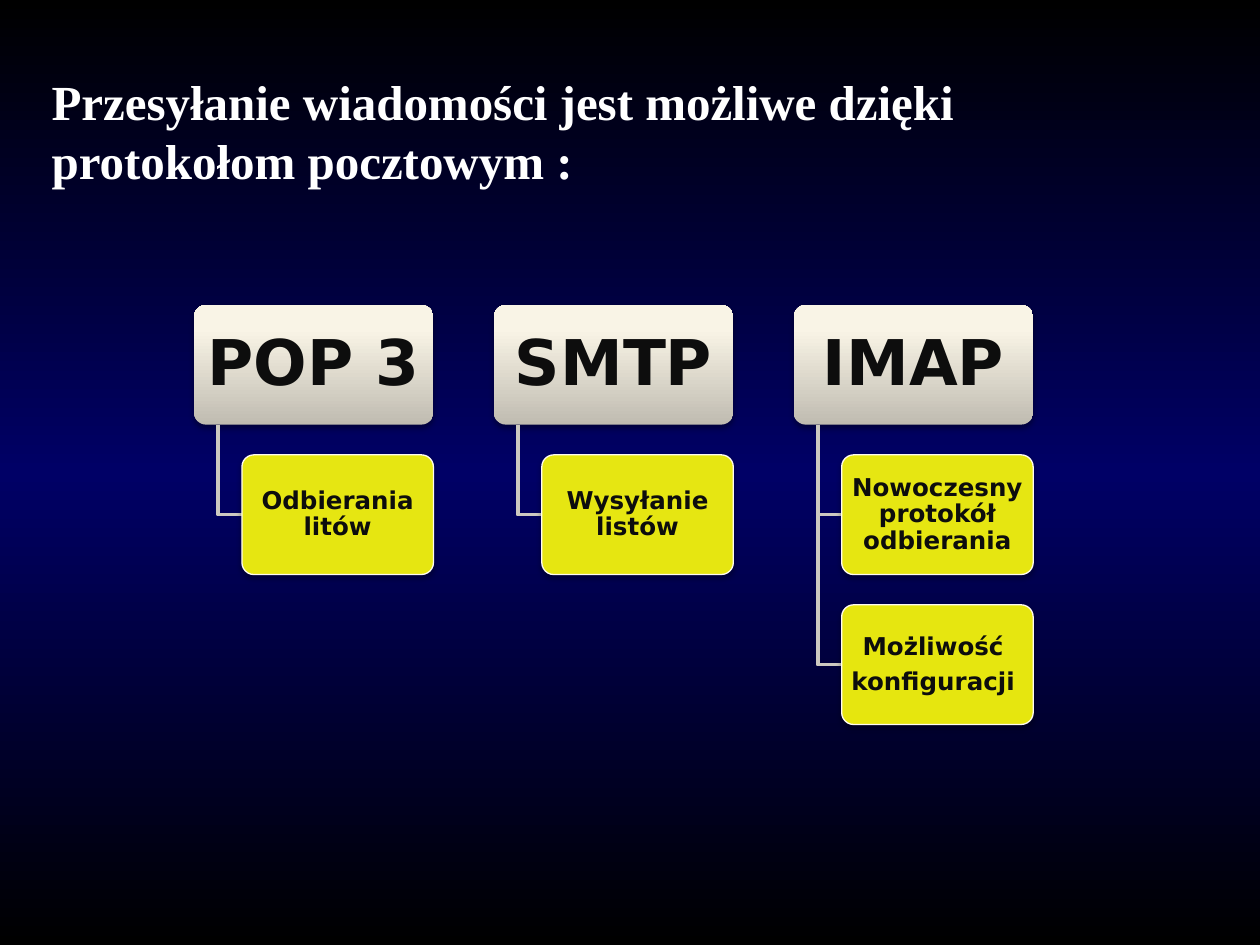
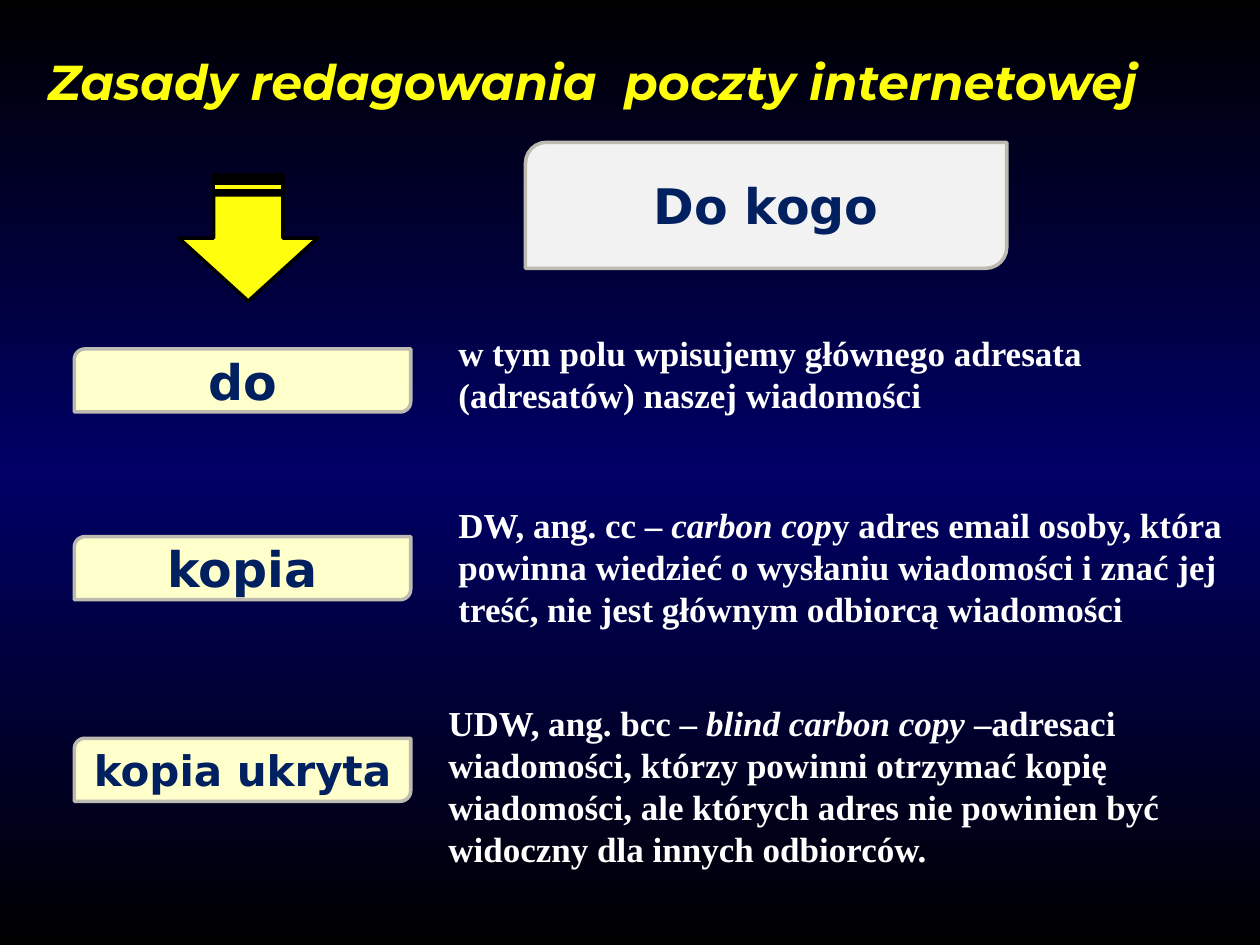
from dataclasses import dataclass
from typing import Any, NamedTuple

from lxml import etree
from pptx import Presentation
from pptx.dml.color import RGBColor
from pptx.enum.shapes import MSO_SHAPE
from pptx.enum.text import MSO_ANCHOR, MSO_AUTO_SIZE, PP_ALIGN
from pptx.oxml.ns import qn
from pptx.util import Inches, Pt

ROUNDED = MSO_SHAPE.ROUNDED_RECTANGLE
DIAGONAL = MSO_SHAPE.ROUND_2_DIAG_RECTANGLE
STRIPED_ARROW = MSO_SHAPE.STRIPED_RIGHT_ARROW
TOP, MIDDLE = MSO_ANCHOR.TOP, MSO_ANCHOR.MIDDLE
LEFT, CENTER = PP_ALIGN.LEFT, PP_ALIGN.CENTER
NO_FIT, GROW = MSO_AUTO_SIZE.NONE, MSO_AUTO_SIZE.SHAPE_TO_FIT_TEXT
TITLE_ONLY = 5


class TextStyle(NamedTuple):
    font: str
    size: int
    color: str
    italic: bool = False


class Outline(NamedTuple):
    color: str
    width: float


@dataclass(frozen=True)
class Theme:
    serif: str = "Times New Roman"
    sans: str = "DejaVu Sans"
    display: str = "Montserrat"
    white: str = "FFFFFF"
    black: str = "000000"
    ink: str = "0D0D0D"
    navy: str = "002060"
    yellow: str = "FFFF0D"
    cream: str = "FFFFCC"
    pale: str = "F2F2F2"
    backdrop: tuple = ((0, "000000"), (50, "000066"), (100, "000000"))
    ivory: tuple = ((0, "C0BCB1"), (80, "F9F4E6"), (100, "FBF6E7"))
    branch: Outline = Outline("CCC9C0", 2)
    task_edge: Outline = Outline("FFFBF0", 0.75)
    label_edge: Outline = Outline("BDBAB2", 2)
    arrow_edge: Outline = Outline("000000", 2)
    title_size: int = 28
    protocol_size: int = 36
    task_size: int = 14
    label_size: int = 28
    long_label_size: int = 24
    body_size: int = 20


THEME = Theme()
PLAIN_TITLE = TextStyle(THEME.serif, THEME.title_size, THEME.white)
ACCENT_TITLE = TextStyle(THEME.display, THEME.title_size, THEME.yellow, True)
PROTOCOL = TextStyle(THEME.sans, THEME.protocol_size, THEME.ink)
TASK = TextStyle(THEME.sans, THEME.task_size, THEME.ink)
LABEL = TextStyle(THEME.sans, THEME.label_size, THEME.navy)
LONG_LABEL = LABEL._replace(size=THEME.long_label_size)
BODY = TextStyle(THEME.serif, THEME.body_size, THEME.white)


class Box(NamedTuple):
    left: float
    top: float
    width: float
    height: float

    def emu(self) -> list[int]:
        return [Inches(length) for length in self]


class Run(NamedTuple):
    text: str
    italic: bool = False


@dataclass(frozen=True)
class Protocol:
    name: str
    tasks: tuple[tuple[str, ...], ...]


@dataclass(frozen=True)
class AddressField:
    label: str
    label_top: float
    style: TextStyle
    description: tuple[Run, ...]
    area: Box


PROTOCOLS = (
    Protocol("POP 3", (("Odbierania litów",),)),
    Protocol("SMTP", (("Wysyłanie listów",),)),
    Protocol("IMAP", (("Nowoczesny protokół odbierania",),
                      ("Możliwość ", "konfiguracji "))),
)

ADDRESS_FIELDS = (
    AddressField("do", 2.77, LABEL, (
        Run("w tym polu wpisujemy głównego adresata (adresatów) naszej wiadomości"),
    ), Box(3.54, 2.58, 6.1, 0.77)),
    AddressField("kopia", 4.26, LABEL, (
        Run("DW, ang. cc – "),
        Run("carbon cop", True),
        Run("y adres email osoby, która powinna wiedzieć o wysłaniu wiadomości "
            "i znać jej treść, nie jest głównym odbiorcą wiadomości"),
    ), Box(3.54, 3.95, 6.26, 1.11)),
    AddressField("kopia ukryta", 5.86, LONG_LABEL, (
        Run("UDW, ang. bcc – "),
        Run("blind carbon copy", True),
        Run(" –adresaci wiadomości, którzy powinni otrzymać kopię wiadomości, "
            "ale których adres nie powinien być widoczny dla innych odbiorców."),
    ), Box(3.46, 5.52, 6.54, 1.45)),
)

COLUMN_LEFT, COLUMN_STEP = 1.54, 2.38
ROW_TOP, ROW_STEP = 2.42, 1.19
PROTOCOL_WIDTH, BOX_HEIGHT = 1.9, 0.95
TRUNK_OFFSET, TASK_OFFSET = 0.19, 0.38


def apply(target: Any, values: dict[str, Any]) -> None:
    for name, value in values.items():
        setattr(target, name, value)


def write(frame: Any, paragraphs: list[tuple[Run, ...]], style: TextStyle,
          paragraph_format: dict[str, Any], frame_format: dict[str, Any]) -> None:
    apply(frame, {"word_wrap": True} | frame_format)
    for index, runs in enumerate(paragraphs):
        paragraph = frame.add_paragraph() if index else frame.paragraphs[0]
        apply(paragraph, paragraph_format)
        for text, italic in runs:
            run = paragraph.add_run()
            run.text = text
            apply(run.font, {"name": style.font, "size": Pt(style.size), "bold": True,
                             "italic": italic or style.italic})
            run.font.color.rgb = RGBColor.from_string(style.color)


def paint_gradient(fill: Any, owner: Any, stops: tuple) -> None:
    """Fill from bottom to top with any number of stops; owner is the XML around the fill."""
    fill.gradient()
    fill.gradient_angle = 90
    stop_list = next(owner.iter(qn("a:gsLst")))
    for stop in list(stop_list):
        stop_list.remove(stop)
    for position, color in stops:
        stop = etree.SubElement(stop_list, qn("a:gs"), pos=str(position * 1000))
        etree.SubElement(stop, qn("a:srgbClr"), val=color)


def draw_outline(shape: Any, outline: Outline | None) -> None:
    if outline is None:
        shape.line.fill.background()
        return
    shape.line.color.rgb = RGBColor.from_string(outline.color)
    shape.line.width = Pt(outline.width)


def add_panel(slide: Any, kind: Any, box: Box, fill: str | tuple,
              outline: Outline | None) -> Any:
    panel = slide.shapes.add_shape(kind, *box.emu())
    panel.shadow.inherit = False
    if isinstance(fill, tuple):
        paint_gradient(panel.fill, panel.element, fill)
    else:
        panel.fill.solid()
        panel.fill.fore_color.rgb = RGBColor.from_string(fill)
    draw_outline(panel, outline)
    return panel


def cast_shadow(shape: Any) -> None:
    effects = next(shape.element.iter(qn("a:effectLst")))
    shadow = etree.SubElement(effects, qn("a:outerShdw"), blurRad=str(Pt(3.1)),
                              dist=str(Pt(1.8)), dir="5400000", rotWithShape="0")
    color = etree.SubElement(shadow, qn("a:srgbClr"), val=THEME.black)
    etree.SubElement(color, qn("a:alpha"), val="35000")


def add_node(slide: Any, box: Box, lines: tuple[str, ...], style: TextStyle,
             fill: str | tuple, outline: Outline | None,
             side: float, end: float) -> Any:
    """Shadowed box of the hierarchy, with side and end margins around its text."""
    node = add_panel(slide, ROUNDED, box, fill, outline)
    node.adjustments[0] = 0.1
    cast_shadow(node)
    margins = {"margin_left": Inches(side), "margin_right": Inches(side),
               "margin_top": Inches(end), "margin_bottom": Inches(end)}
    write(node.text_frame, [(Run(line),) for line in lines], style,
          {"alignment": CENTER, "line_spacing": 0.9, "space_after": Pt(style.size * 0.35)},
          {"vertical_anchor": MIDDLE} | margins)
    return node


def add_branch(slide: Any, left: float, top: float, right: float, bottom: float) -> None:
    builder = slide.shapes.build_freeform(Inches(left), Inches(top))
    builder.add_line_segments([(Inches(left), Inches(bottom)),
                               (Inches(right), Inches(bottom))], close=False)
    branch = builder.convert_to_shape()
    branch.shadow.inherit = False
    branch.fill.background()
    draw_outline(branch, THEME.branch)


def add_protocol(slide: Any, left: float, protocol: Protocol) -> None:
    add_node(slide, Box(left, ROW_TOP, PROTOCOL_WIDTH, BOX_HEIGHT), (protocol.name,),
             PROTOCOL, THEME.ivory, None, 0.07, 0.05)
    task_left = left + TASK_OFFSET
    for row, lines in enumerate(protocol.tasks, start=1):
        top = ROW_TOP + row * ROW_STEP
        add_branch(slide, left + TRUNK_OFFSET, ROW_TOP + BOX_HEIGHT,
                   task_left, top + BOX_HEIGHT / 2)
        task = add_node(slide, Box(task_left, top, PROTOCOL_WIDTH - TASK_OFFSET, BOX_HEIGHT),
                        lines, TASK, THEME.yellow, THEME.task_edge, 0.03, 0.02)
        fill_color = next(task.element.spPr.iter(qn("a:srgbClr")))
        etree.SubElement(fill_color, qn("a:alpha"), val="90000")


def add_label(slide: Any, box: Box, text: str, style: TextStyle, fill: str) -> None:
    label = add_panel(slide, DIAGONAL, box, fill, THEME.label_edge)
    write(label.text_frame, [(Run(text),)], style, {"alignment": CENTER},
          {"vertical_anchor": MIDDLE})


def add_titled_slide(deck: Any, lines: tuple[str, ...], box: Box, style: TextStyle) -> Any:
    slide = deck.slides.add_slide(deck.slide_layouts[TITLE_ONLY])
    title = slide.shapes.title
    apply(title, dict(zip(("left", "top", "width", "height"), box.emu())))
    write(title.text_frame, [(Run(line),) for line in lines], style, {"alignment": LEFT},
          {"vertical_anchor": TOP, "auto_size": NO_FIT})
    return slide


def build_protocols(deck: Any) -> None:
    slide = add_titled_slide(
        deck, ("Przesyłanie wiadomości jest możliwe dzięki", "protokołom pocztowym :"),
        Box(0.31, 0.52, 9.45, 1.04), PLAIN_TITLE)
    for column, protocol in enumerate(PROTOCOLS):
        add_protocol(slide, COLUMN_LEFT + column * COLUMN_STEP, protocol)


def build_address_fields(deck: Any) -> None:
    slide = add_titled_slide(deck, ("Zasady redagowania  poczty internetowej",),
                             Box(0.28, 0.36, 9.29, 0.82), ACCENT_TITLE)
    add_label(slide, Box(4.17, 1.13, 3.82, 1), "Do kogo", LABEL, THEME.pale)
    arrow = add_panel(slide, STRIPED_ARROW, Box(1.47, 1.34, 1, 1.1),
                      THEME.yellow, THEME.arrow_edge)
    arrow.rotation = 90
    for field in ADDRESS_FIELDS:
        add_label(slide, Box(0.59, field.label_top, 2.67, 0.5), field.label,
                  field.style, THEME.cream)
        description = slide.shapes.add_textbox(*field.area.emu())
        write(description.text_frame, [field.description], BODY, {"alignment": LEFT},
              {"auto_size": GROW})


def main() -> None:
    deck = Presentation()
    apply(deck, {"slide_width": Inches(10), "slide_height": Inches(7.5)})
    master = deck.slide_master
    paint_gradient(master.background.fill, master.element, THEME.backdrop)
    build_protocols(deck)
    build_address_fields(deck)
    deck.save("out.pptx")


if __name__ == "__main__":
    main()
